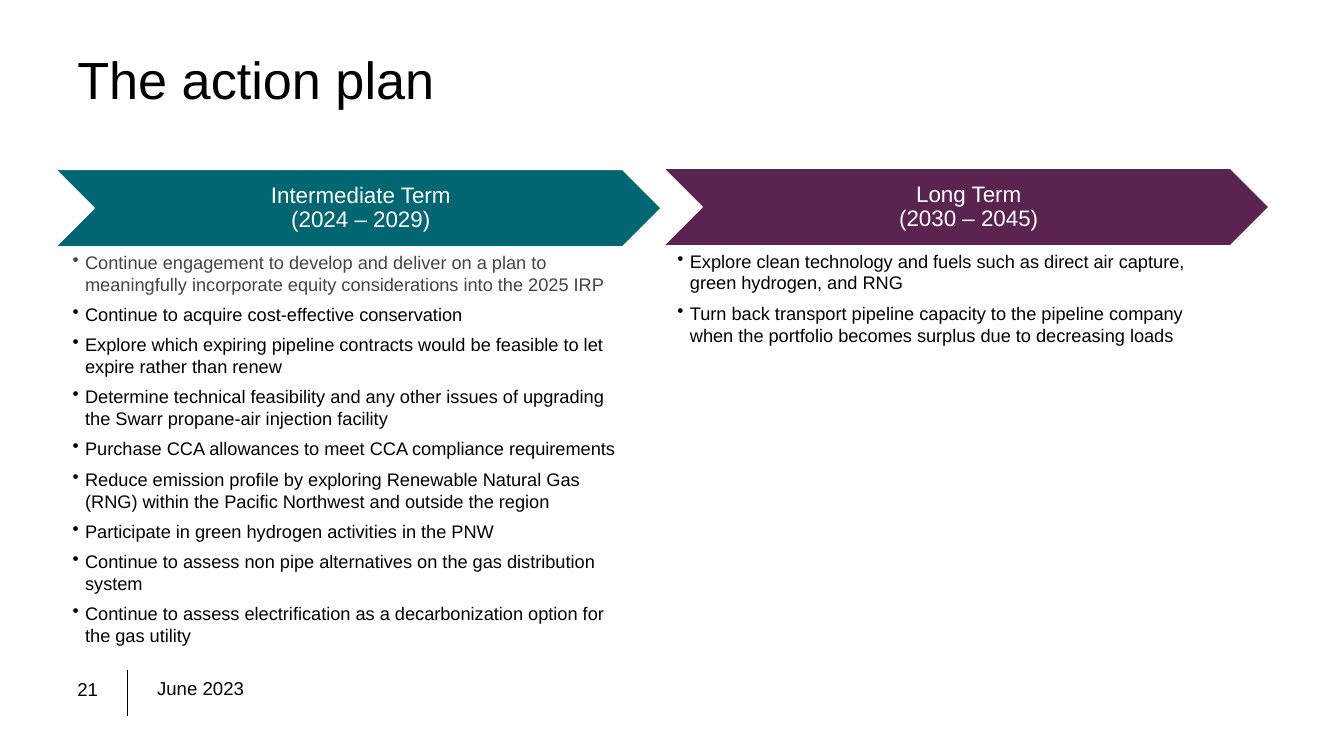
"""Build the action plan slide with two term columns."""
import pptx
import pptx.util
import pptx.dml.color
import pptx.enum.shapes
import pptx.enum.text
import pptx.oxml.ns
import lxml.etree

Pt = pptx.util.Pt
ANCHOR = pptx.enum.text.MSO_ANCHOR
COLORS = {"black": "000000", "white": "FFFFFF", "grey": "444444",
          "teal": "006671", "plum": "5B234F"}

presentation = pptx.Presentation()
presentation.slide_width, presentation.slide_height = Pt(960), Pt(540)
slide = presentation.slides.add_slide(presentation.slide_layouts[6])


def add_text_box(left, top, width, height, margins, anchor=ANCHOR.TOP):
    frame = slide.shapes.add_textbox(Pt(left), Pt(top), Pt(width), Pt(height)).text_frame
    frame.word_wrap = True
    frame.vertical_anchor = anchor
    frame.margin_left = frame.margin_right = Pt(margins[0])
    frame.margin_top = frame.margin_bottom = Pt(margins[1])
    return frame


def add_run(paragraph, text, size, color):
    run = paragraph.add_run()
    run.text = text
    run.font.name = "Arial"
    run.font.size = Pt(size)
    run.font.color.rgb = pptx.dml.color.RGBColor.from_string(COLORS[color])


divider = slide.shapes.add_connector(
    pptx.enum.shapes.MSO_CONNECTOR.STRAIGHT, Pt(91), Pt(478.8), Pt(91), Pt(511.2))
divider.line.width = Pt(0.75)
divider.line.color.rgb = pptx.dml.color.RGBColor.from_string(COLORS["black"])
lxml.etree.SubElement(divider._element.spPr, pptx.oxml.ns.qn("a:effectLst"))

labels = [
    ("21", 48.2, 481, 40.3, 23.8, 13.3, 1, ANCHOR.TOP),
    ("June 2023", 105.1, 481.7, 331.9, 23.8, 13.3, 0.9, ANCHOR.TOP),
    ("The action plan", 48.2, 28.8, 864, 59.8, 37.3, 0.9, ANCHOR.MIDDLE),
]
for text, left, top, width, height, size, spacing, anchor in labels:
    paragraph = add_text_box(left, top, width, height, (7.2, 3.6), anchor).paragraphs[0]
    paragraph.line_spacing = spacing
    add_run(paragraph, text, size, "black")

terms = [
    ("Intermediate Term", "(2024 – 2029)", "teal", 39.6, 121, 51.8, 395.3, [
        ("Continue engagement to develop and deliver on a plan to meaningfully "
         "incorporate equity considerations into the 2025 IRP", "grey"),
        ("Continue to acquire cost-effective conservation", "black"),
        ("Explore which expiring pipeline contracts would be feasible to let "
         "expire rather than renew", "black"),
        ("Determine technical feasibility and any other issues of upgrading "
         "the Swarr propane-air injection facility", "black"),
        ("Purchase CCA allowances to meet CCA compliance requirements", "black"),
        ("Reduce emission profile by exploring Renewable Natural Gas (RNG) "
         "within the Pacific Northwest and outside the region", "black"),
        ("Participate in green hydrogen activities in the PNW", "black"),
        ("Continue to assess non pipe alternatives on the gas distribution system", "black"),
        ("Continue to assess electrification as a decarbonization option for "
         "the gas utility", "black"),
    ]),
    ("Long Term", "(2030 – 2045)", "plum", 473.8, 120.2, 483.8, 383, [
        ("Explore clean technology and fuels such as direct air capture, "
         "green hydrogen, and RNG", "black"),
        ("Turn back transport pipeline capacity to the pipeline company when "
         "the portfolio becomes surplus due to decreasing loads", "black"),
    ]),
]
for name, years, color, left, top, list_left, list_width, actions in terms:
    chevron = slide.shapes.add_shape(
        pptx.enum.shapes.MSO_SHAPE.CHEVRON, Pt(left), Pt(top), Pt(432.7), Pt(55.4))
    chevron.shadow.inherit = False
    chevron.fill.solid()
    chevron.fill.fore_color.rgb = pptx.dml.color.RGBColor.from_string(COLORS[color])
    chevron.line.color.rgb = pptx.dml.color.RGBColor.from_string(COLORS["white"])
    chevron.line.width = Pt(1)
    heading = chevron.text_frame
    heading.word_wrap = True
    heading.vertical_anchor = ANCHOR.MIDDLE
    heading.margin_left = Pt(5)
    heading.margin_right = heading.margin_top = heading.margin_bottom = Pt(1.5)
    paragraph = heading.paragraphs[0]
    paragraph.alignment = pptx.enum.text.PP_ALIGN.CENTER
    paragraph.line_spacing = 0.9
    add_run(paragraph, name, 16, "white")
    paragraph.add_line_break()
    add_run(paragraph, years, 16, "white")

    action_list = add_text_box(list_left, top + 58.3, list_width, 313.2, (0, 0))
    for index, (action, action_color) in enumerate(actions):
        paragraph = action_list.add_paragraph() if index else action_list.paragraphs[0]
        paragraph.space_after = Pt(6)
        properties = paragraph._p.get_or_add_pPr()
        properties.set("marL", str(Pt(9)))
        properties.set("indent", str(-Pt(9)))
        bullet = lxml.etree.SubElement(properties, pptx.oxml.ns.qn("a:buChar"))
        bullet.set("char", "•")
        add_run(paragraph, action, 13, action_color)

presentation.save("out.pptx")
